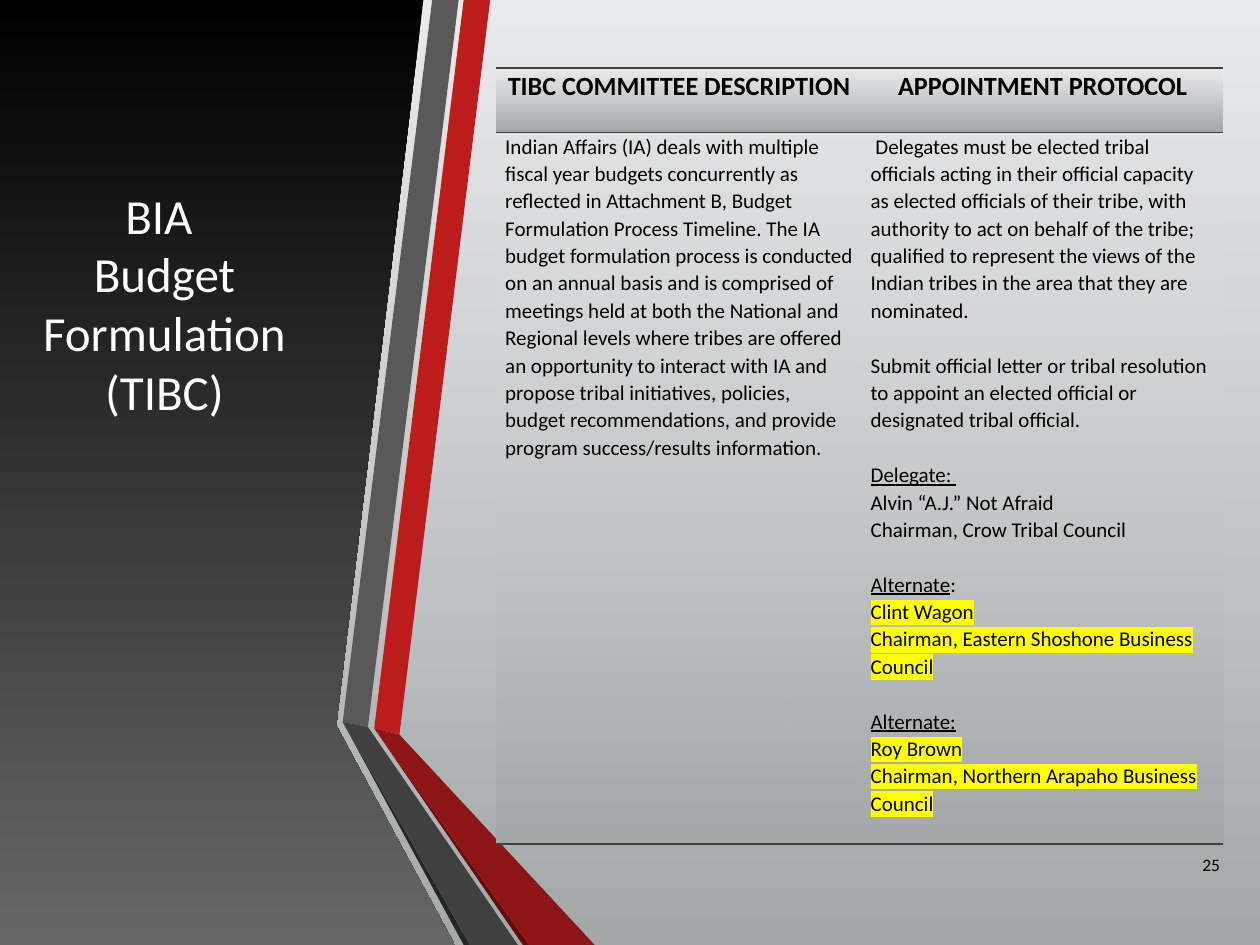
from lxml import etree
from pptx import Presentation
from pptx.dml.color import RGBColor
from pptx.enum.text import MSO_ANCHOR, PP_ALIGN
from pptx.oxml.ns import qn
from pptx.util import Inches, Pt

LEFT, CENTER, RIGHT = PP_ALIGN.LEFT, PP_ALIGN.CENTER, PP_ALIGN.RIGHT
MIDDLE, TOP = MSO_ANCHOR.MIDDLE, MSO_ANCHOR.TOP

BLACK = RGBColor(0x00, 0x00, 0x00)
WHITE = RGBColor(0xFF, 0xFF, 0xFF)
LIGHT = RGBColor(0xE9, 0xEA, 0xEB)
SILVER = RGBColor(0xA5, 0xA8, 0xA9)
PANEL_GREY = RGBColor(0x67, 0x67, 0x67)
RULE = RGBColor(0x40, 0x40, 0x40)
YELLOW = RGBColor(0xFF, 0xFF, 0x00)
# Upper band, fold shadow, lower band
REDS = [RGBColor(0xBC, 0x1C, 0x1C), RGBColor(0x5E, 0x0E, 0x0E), RGBColor(0x8D, 0x15, 0x15)]
GREYS = [RGBColor(0x59, 0x59, 0x59), RGBColor(0x26, 0x26, 0x26), RGBColor(0x40, 0x40, 0x40)]

FONT = "Calibri"
SLIDE_W, SLIDE_H = Inches(10), Inches(7.5)
COLS, ROWS = 1000, 750          # slide grid
UNIT = SLIDE_W // COLS          # square grid cell
LINE_SPACING = 1.07
BLANK_LINE = 15.66              # one 12 pt line, in points

DESCRIPTION = (
    "Indian Affairs (IA) deals with multiple fiscal year budgets concurrently as "
    "reflected in Attachment B, Budget Formulation Process Timeline. The IA budget "
    "formulation process is conducted on an annual basis and is comprised of meetings "
    "held at both the National and Regional levels where tribes are offered an "
    "opportunity to interact with IA and propose tribal initiatives, policies, budget "
    "recommendations, and provide program success/results information.")
PROTOCOL = (
    " Delegates must be elected tribal officials acting in their official capacity as "
    "elected officials of their tribe, with authority to act on behalf of the tribe; "
    "qualified to represent the views of the Indian tribes in the area that they are "
    "nominated.")
SUBMIT = ("Submit official letter or tribal resolution to appoint an elected official "
          "or designated tribal official.")
# Underlined role, plain tail, highlighted?, name, office
MEMBERS = [
    ("Delegate: ", "", False, "Alvin “A.J.” Not Afraid", "Chairman, Crow Tribal Council"),
    ("Alternate", ":", True, "Clint Wagon", "Chairman, Eastern Shoshone Business Council"),
    ("Alternate:", "", True, "Roy Brown", "Chairman, Northern Arapaho Business Council"),
]


def gradient(fill, first, last):
    """Vertical gradient running from top to bottom."""
    fill.gradient()
    fill.gradient_angle = 270
    for stop, color in zip(fill.gradient_stops, (first, last)):
        stop.color.rgb = color


def add_text(tf, text, size=12, color=BLACK, bold=False, underline=False, highlight=None,
             align=LEFT, before=0, spacing=None, same_line=False):
    """Add a run, in a new paragraph unless same_line is set."""
    p = tf.paragraphs[-1]
    if p.runs and not same_line:
        p = tf.add_paragraph()
    if not same_line:
        p.alignment = align
        p.space_before = Pt(before)
        if spacing:
            p.line_spacing = spacing
    r = p.add_run()
    r.text = text
    r.font.name, r.font.size = FONT, Pt(size)
    r.font.bold, r.font.underline = bold, underline
    r.font.color.rgb = color
    if highlight is not None:
        mark = etree.Element(qn("a:highlight"))
        etree.SubElement(mark, qn("a:srgbClr"), val=str(highlight))
        r.font._element.find(qn("a:solidFill")).addnext(mark)


def add_box(s, x, y, w, h, anchor=TOP):
    tf = s.shapes.add_textbox(x * UNIT, y * UNIT, w * UNIT, h * UNIT).text_frame
    tf.word_wrap = True
    tf.vertical_anchor = anchor
    return tf


def add_polygon(s, x, y, points):
    """Closed outline whose points count grid cells from (x, y)."""
    builder = s.shapes.build_freeform(*points[0], scale=UNIT)
    builder.add_line_segments(points[1:], close=True)
    sp = builder.convert_to_shape(x * UNIT, y * UNIT)
    sp.shadow.inherit = False
    sp.line.fill.background()
    return sp


def add_panel(s, x, y, h):
    sp = add_polygon(s, x, y, [(0, 0), (336, 0), (267, 575), (267, 576), (361, h), (0, h)])
    gradient(sp.fill, BLACK, PANEL_GREY)


def add_ribbon(s, x, y, h, colors, fold, tops, bottoms):
    """Folded ribbon: fold is (left y, right x, right y)."""
    left_y, right_x, right_y = fold
    start, inner, end = bottoms
    knee, corner = (0, left_y), (right_x, right_y)
    parts = [
        [knee, corner, (tops[1], 0), (tops[0], 0)],
        [knee, (start, h), (inner, h)],
        [knee, (inner, h), (end, h), corner],
    ]
    for points, color in zip(parts, colors):
        sp = add_polygon(s, x, y, points)
        sp.fill.solid()
        sp.fill.fore_color.rgb = color


def set_borders(cell, edges):
    """Rule the named edges and clear the rest."""
    tcPr = cell._tc.get_or_add_tcPr()
    for i, edge in enumerate("LRTB"):
        ln = etree.Element(qn("a:ln" + edge), w=str(Pt(1) if edge in edges else 0))
        if edge in edges:
            solid = etree.SubElement(ln, qn("a:solidFill"))
            etree.SubElement(solid, qn("a:srgbClr"), val=str(RULE))
        else:
            etree.SubElement(ln, qn("a:noFill"))
        tcPr.insert(i, ln)


def fill_protocol(tf):
    add_text(tf, PROTOCOL, spacing=LINE_SPACING)
    add_text(tf, SUBMIT, before=BLANK_LINE, spacing=LINE_SPACING)
    for role, tail, marked, name, office in MEMBERS:
        add_text(tf, role, underline=True, before=BLANK_LINE, spacing=LINE_SPACING)
        if tail:
            add_text(tf, tail, same_line=True)
        for text in (name, office):
            add_text(tf, text, highlight=YELLOW if marked else None, spacing=LINE_SPACING)


def add_committee_table(s, x, y, widths, heights):
    frame = s.shapes.add_table(2, 2, x * UNIT, y * UNIT, sum(widths) * UNIT, sum(heights) * UNIT)
    table = frame.table
    table.horz_banding = False
    for column, w in zip(table.columns, widths):
        column.width = w * UNIT
    for row, h in zip(table.rows, heights):
        row.height = h * UNIT

    for i, cell in enumerate(table.iter_cells()):
        header = i < 2
        cell.margin_left = cell.margin_right = 7 * UNIT
        cell.margin_top = cell.margin_bottom = 0
        gradient(cell.fill, LIGHT, SILVER)
        if not header:  # body fades in from clear
            color = cell._tc.tcPr.find(".//" + qn("a:srgbClr"))
            etree.SubElement(color, qn("a:alpha"), val="0")
        set_borders(cell, "TB")

    for cell, title in zip(table.rows[0].cells, ("TIBC COMMITTEE DESCRIPTION", "APPOINTMENT PROTOCOL")):
        add_text(cell.text_frame, title, size=15, bold=True, align=CENTER, spacing=LINE_SPACING)
    add_text(table.cell(1, 0).text_frame, DESCRIPTION, spacing=LINE_SPACING)
    fill_protocol(table.cell(1, 1).text_frame)


def add_title(s, x, y, w, h):
    tf = add_box(s, x, y, w, h)
    for text in ("BIA ", "Budget Formulation (TIBC)"):
        add_text(tf, text, size=28, color=WHITE, align=CENTER)


def main():
    prs = Presentation()
    prs.slide_width, prs.slide_height = SLIDE_W, SLIDE_H
    s = prs.slides.add_slide(prs.slide_layouts[6])
    gradient(s.background.fill, LIGHT, SILVER)

    # Dark side panel and its two folded ribbons
    add_panel(s, 0, 0, ROWS)
    add_ribbon(s, 297, 0, ROWS, REDS, (578, 20, 583), (71, 92), (118, 123, 175))
    add_ribbon(s, 272, 0, ROWS, GREYS, (573, 20, 577), (71, 92), (96, 101, 139))

    # Page number, table and title
    add_text(add_box(s, 933, 666, 45, 40, MIDDLE), "25", size=10, align=RIGHT)
    add_committee_table(s, 394, 54, (290, 287), (51, 565))
    add_title(s, 17, 142, 227, 199)
    prs.save("out.pptx")


if __name__ == "__main__":
    main()
